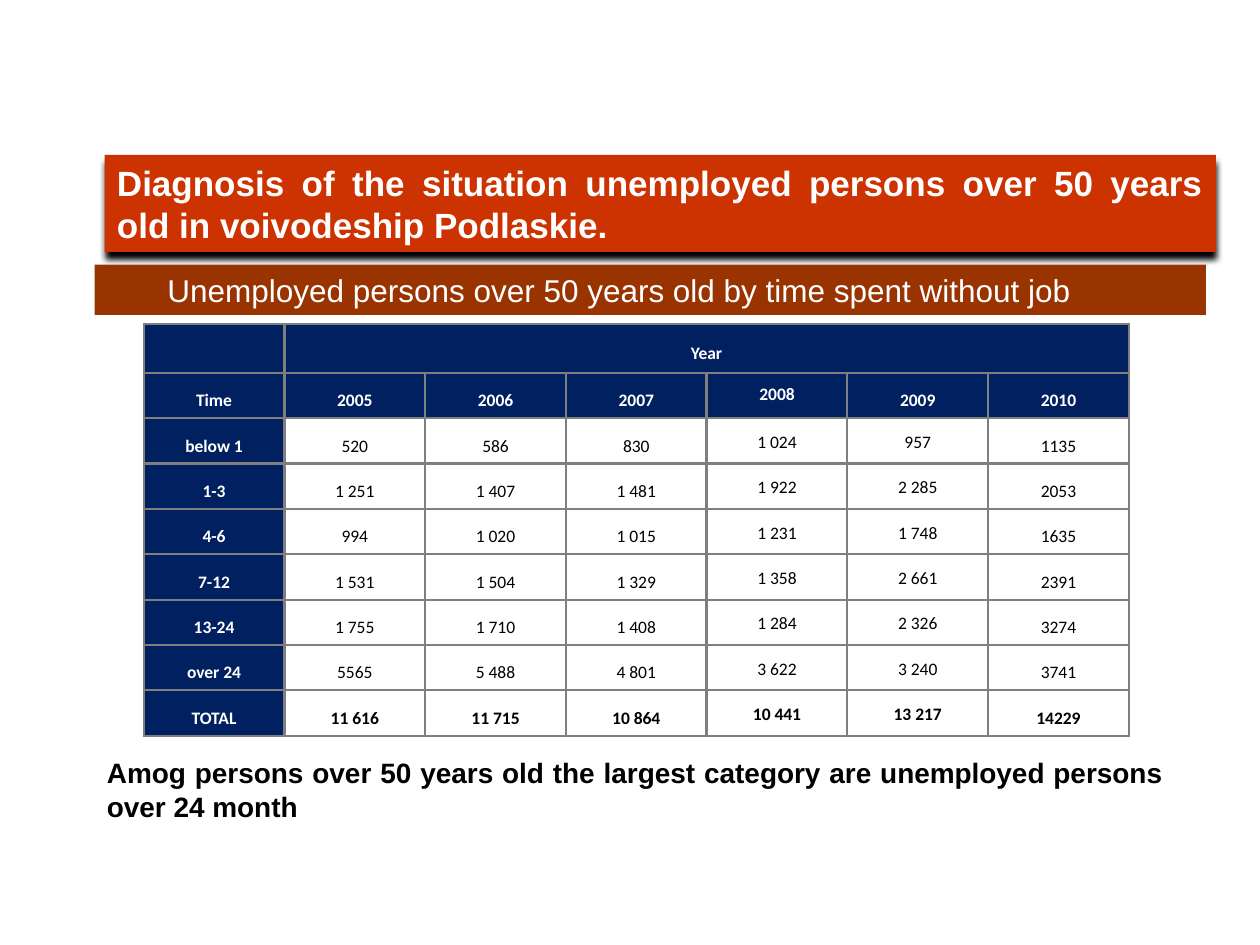
from dataclasses import dataclass

from lxml.etree import SubElement
from pptx import Presentation
from pptx.dml.color import RGBColor as Color
from pptx.enum.shapes import MSO_SHAPE as Preset
from pptx.enum.text import MSO_ANCHOR as Anchor
from pptx.enum.text import MSO_AUTO_SIZE as AutoSize
from pptx.enum.text import PP_ALIGN as Align
from pptx.oxml.ns import qn
from pptx.util import Inches, Pt


@dataclass(frozen=True)
class Theme:
    title_fill: str = "CC3300"
    subtitle_fill: str = "993300"
    header_fill: str = "002060"
    border: str = "7F7F7F"
    light: str = "FFFFFF"
    dark: str = "000000"
    heading_font: str = "Arial"
    table_font: str = "Calibri"
    title_size: int = 20
    subtitle_size: int = 18
    note_size: int = 16
    table_size: int = 10
    border_width: float = 1.5


THEME = Theme()
HEADER_ROWS = 2
TOP_COLUMN = 4
TIGHT_COLUMNS = (4, 5)
ROWS = [
    ["", "Year", "", "", "", "", ""],
    ["Time", "2005", "2006", "2007", "2008", "2009", "2010"],
    ["below 1", "520", "586", "830", "1 024", "957", "1135"],
    ["1-3", "1 251", "1 407", "1 481", "1 922", "2 285", "2053"],
    ["4-6", "994", "1 020", "1 015", "1 231", "1 748", "1635"],
    ["7-12", "1 531", "1 504", "1 329", "1 358", "2 661", "2391"],
    ["13-24", "1 755", "1 710", "1 408", "1 284", "2 326", "3274"],
    ["over 24", "5565", "5 488", "4 801", "3 622", "3 240", "3741"],
    ["TOTAL", "11 616", "11 715", "10 864", "10 441", "13 217", "14229"],
]


def apply_format(target, values):
    for name, value in values.items():
        setattr(target, name, value)


def write_text(para, text, font, size, color, bold, **layout):
    apply_format(para, layout)
    span = para.add_run()
    span.text = text
    apply_format(span.font, {"name": font, "size": Pt(size), "bold": bold})
    span.font.color.rgb = Color.from_string(color)


def fill_frame(box, text, size, color, bold):
    frame = box.text_frame
    apply_format(frame, {
        "word_wrap": True,
        "auto_size": AutoSize.SHAPE_TO_FIT_TEXT,
        "vertical_anchor": Anchor.TOP,
    })
    para = frame.paragraphs[0]
    write_text(para, text, THEME.heading_font, size, color, bold, alignment=Align.JUSTIFY)
    return para


def add_banner(page, area, text, fill, size, bold):
    box = page.shapes.add_shape(Preset.RECTANGLE, *map(Inches, area))
    box.shadow.inherit = False
    box.fill.solid()
    box.fill.fore_color.rgb = Color.from_string(fill)
    box.line.fill.background()
    para = fill_frame(box, text, size, THEME.light, bold)
    return box, para


def add_drop_shadow(box):
    effects = box._element.spPr.find(qn("a:effectLst"))
    shadow = SubElement(effects, qn("a:outerShdw"), {
        "blurRad": str(Pt(4)), "dist": str(Pt(4)), "dir": "5400000", "rotWithShape": "0",
    })
    SubElement(shadow, qn("a:srgbClr"), val=THEME.dark)


def add_note(page, area, text):
    box = page.shapes.add_textbox(*map(Inches, area))
    fill_frame(box, text, THEME.note_size, THEME.dark, True)


def set_borders(cell):
    properties = cell._tc.get_or_add_tcPr()
    for position, side in enumerate(("lnL", "lnR", "lnT", "lnB")):
        line = SubElement(properties, qn(f"a:{side}"), w=str(Pt(THEME.border_width)))
        properties.insert(position, line)
        fill = SubElement(line, qn("a:solidFill"))
        SubElement(fill, qn("a:srgbClr"), val=THEME.border)


def style_cell(cell, text, row, column):
    in_header = row < HEADER_ROWS or column == 0
    at_top = row == 1 and column == TOP_COLUMN
    tight = not in_header and column in TIGHT_COLUMNS
    apply_format(cell, {
        "margin_left": Inches(0.07),
        "margin_right": Inches(0.07),
        "margin_top": 0,
        "margin_bottom": 0,
        "vertical_anchor": Anchor.TOP if at_top else Anchor.MIDDLE,
    })
    if in_header:
        cell.fill.solid()
        cell.fill.fore_color.rgb = Color.from_string(THEME.header_fill)
    else:
        cell.fill.background()
    set_borders(cell)
    if text:
        write_text(
            cell.text_frame.paragraphs[0], text, THEME.table_font, THEME.table_size,
            THEME.light if in_header else THEME.dark,
            in_header or row == len(ROWS) - 1,
            alignment=Align.CENTER, line_spacing=1.15 if tight else 1.5,
        )


def add_unemployment_table(page, area):
    frame = page.shapes.add_table(len(ROWS), len(ROWS[0]), *map(Inches, area))
    table = frame.table
    apply_format(table, {"first_row": False, "horz_banding": False})
    for column in table.columns:
        column.width = Inches(area[2] / len(ROWS[0]))
    for index, row in enumerate(table.rows):
        row.height = Inches(0.36 if index else 0.39)
    table.cell(0, 1).merge(table.cell(0, len(ROWS[0]) - 1))
    for row, texts in enumerate(ROWS):
        for column, text in enumerate(texts):
            style_cell(table.cell(row, column), text, row, column)


def main():
    deck = Presentation()
    apply_format(deck, {"slide_width": Inches(10), "slide_height": Inches(7.5)})
    page = deck.slides.add_slide(deck.slide_layouts[6])
    title, _ = add_banner(
        page, (0.83, 1.23, 8.82, 0.77),
        "Diagnosis of the situation unemployed persons over 50 years old in voivodeship Podlaskie.",
        THEME.title_fill, THEME.title_size, True,
    )
    add_drop_shadow(title)
    _, subtitle = add_banner(
        page, (0.75, 2.1, 8.82, 0.4),
        "Unemployed persons over 50 years old by time spent without job",
        THEME.subtitle_fill, THEME.subtitle_size, False,
    )
    subtitle._p.get_or_add_pPr().set("marL", str(Inches(0.48)))
    add_unemployment_table(page, (1.14, 2.57, 7.82, 3.26))
    add_note(
        page, (0.75, 5.95, 8.58, 0.64),
        "Amog persons over 50 years old the largest category are unemployed persons over 24 month",
    )
    deck.save("out.pptx")


if __name__ == "__main__":
    main()
